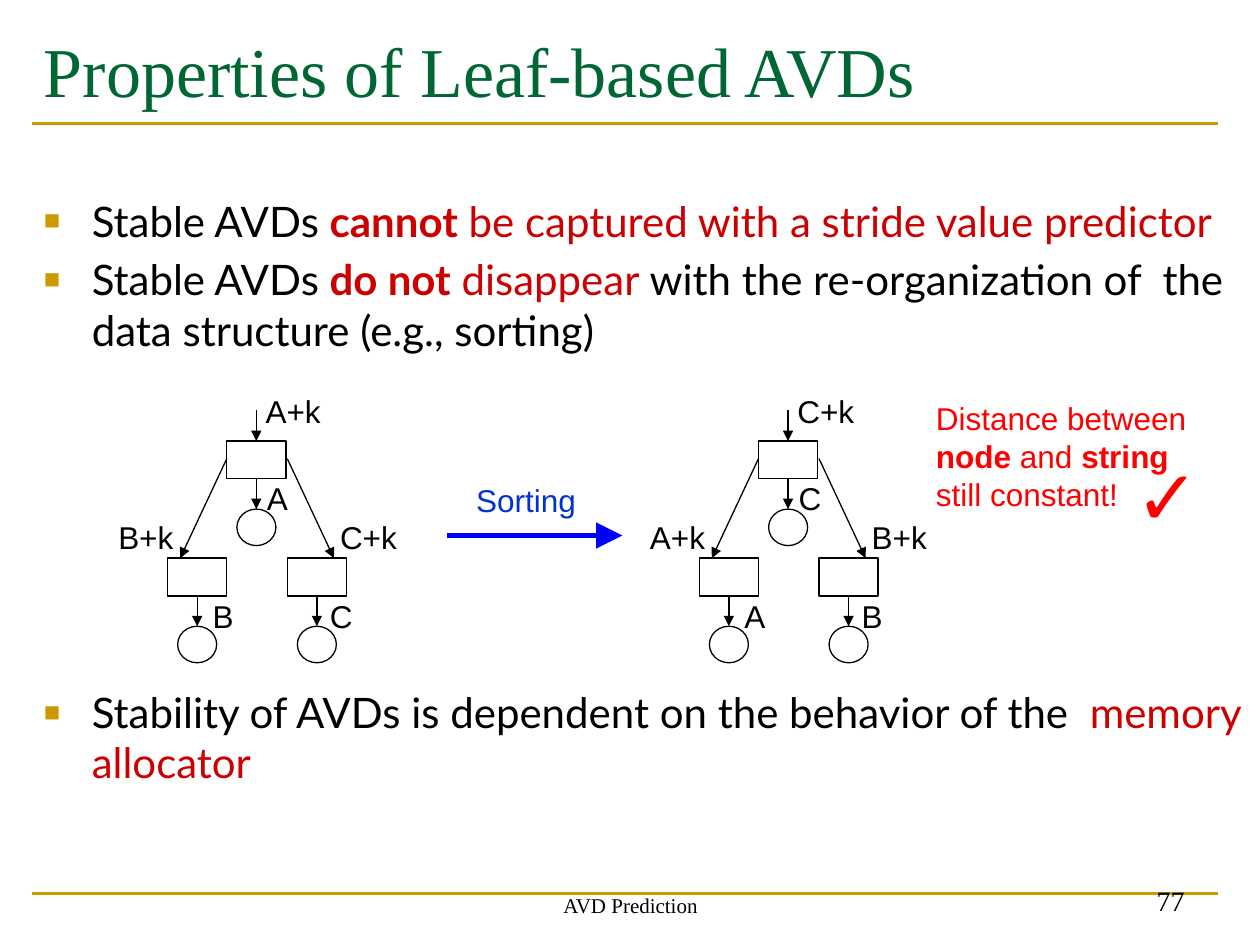
import dataclasses
import lxml.etree
import pptx
import pptx.dml.color
import pptx.enum.shapes
import pptx.enum.text
import pptx.oxml.ns
import pptx.util

Inches = pptx.util.Inches
Pt = pptx.util.Pt
Shape = pptx.enum.shapes.MSO_SHAPE
Align = pptx.enum.text.PP_ALIGN
Anchor = pptx.enum.text.MSO_ANCHOR
qn = pptx.oxml.ns.qn


@dataclasses.dataclass(frozen=True)
class Theme:
    serif: str = "Times New Roman"
    body: str = "Lato"
    label: str = "Arial"
    black: str = "000000"
    gold: str = "CC9900"
    green: str = "006633"
    crimson: str = "CC0000"
    red: str = "FF0000"
    blue: str = "0000FF"
    caption: str = "0033CC"
    title_size: int = 40
    body_size: int = 24
    label_size: int = 18
    check_size: int = 44
    footer_size: int = 12
    number_size: int = 16
    thin: float = 0.75
    rule: float = 1.5
    thick: float = 3


THEME = Theme()
RED = {"color": THEME.crimson}
RED_BOLD = {"color": THEME.crimson, "bold": True}
BOLD = {"bold": True}

TITLE = [["Properties of Leaf-based AVDs"]]
BULLETS = [
    ["Stable AVDs ", ("cannot", RED_BOLD), (" be captured with a stride value predictor", RED)],
    ["Stable AVDs ", ("do not", RED_BOLD), (" disappear", RED),
     " with the re-organization of  the data structure (e.g., sorting)"],
    ["Stability of AVDs is dependent on the behavior of the  ", ("memory allocator", RED)],
]
BULLET_SPACE = [4.8, 4.8, 189.5]
REMARK = [["Distance between"], [("node", BOLD), " and ", ("string", BOLD)], ["still constant!"]]
TREES = [(1.8, "ABC"), (6.02, "CAB")]
RULES = [7.09, 0.98]

NODE_WIDTH, NODE_HEIGHT = 0.47, 0.3
LEAF_WIDTH, LEAF_HEIGHT = 0.31, 0.29
ROOT_TOP, CHILD_TOP = 3.5, 4.43
NODES = [
    {"left": 0, "top": ROOT_TOP, "address": (0.21, 3.06), "value": (0.22, 3.75)},
    {"left": -0.47, "top": CHILD_TOP, "address": (-0.96, 4.06), "value": (-0.21, 4.69)},
    {"left": 0.48, "top": CHILD_TOP, "address": (0.8, 4.06), "value": (0.72, 4.69)},
]
BRANCHES = [(0, -0.37), (0.48, 0.85)]


def rgb(value):
    return pptx.dml.color.RGBColor.from_string(value)


def add_text(owner, place, paragraphs, *, font=THEME.label, size=THEME.label_size,
             color=THEME.black, align=Align.LEFT, anchor=Anchor.TOP, wrap=True,
             bullet=False, space=None):
    box = owner.add_textbox(*map(Inches, place))
    frame = box.text_frame
    frame.word_wrap = wrap
    frame.vertical_anchor = anchor
    for index, pieces in enumerate(paragraphs):
        para = frame.paragraphs[0] if index == 0 else frame.add_paragraph()
        para.alignment = align
        if space:
            para.space_before = Pt(space[index])
        if bullet:
            add_bullet(para)
        for piece in pieces:
            words, style = (piece, {}) if isinstance(piece, str) else piece
            span = para.add_run()
            span.text = words
            span.font.name = font
            span.font.size = Pt(size)
            span.font.bold = style.get("bold", False)
            span.font.color.rgb = rgb(style.get("color", color))


def add_bullet(para):
    settings = para._p.get_or_add_pPr()
    settings.set("marL", str(Inches(0.38)))
    settings.set("indent", str(-Inches(0.38)))
    tint = lxml.etree.SubElement(settings, qn("a:buClr"))
    lxml.etree.SubElement(tint, qn("a:srgbClr")).set("val", THEME.gold)
    lxml.etree.SubElement(settings, qn("a:buSzPct")).set("val", "65000")
    lxml.etree.SubElement(settings, qn("a:buFont")).set("typeface", THEME.label)
    lxml.etree.SubElement(settings, qn("a:buChar")).set("char", "■")


def add_line(owner, start, end, color=THEME.black, width=THEME.thin, arrow="med"):
    line = owner.add_connector(pptx.enum.shapes.MSO_CONNECTOR.STRAIGHT,
                               *map(Inches, (*start, *end)))
    line.line.color.rgb = rgb(color)
    line.line.width = Pt(width)
    if arrow:
        tip = lxml.etree.SubElement(line.line._get_or_add_ln(), qn("a:tailEnd"))
        for key, value in (("type", "triangle"), ("w", arrow), ("len", arrow)):
            tip.set(key, value)
    lxml.etree.SubElement(line._element.spPr, qn("a:effectLst"))


def add_outline(owner, kind, place):
    shape = owner.add_shape(kind, *map(Inches, place))
    shape.shadow.inherit = False
    shape.fill.background()
    shape.line.color.rgb = rgb(THEME.black)
    shape.line.width = Pt(THEME.thin)


def add_tree(page, left, names):
    group = page.shapes.add_group_shape().shapes
    root_middle = left + NODE_WIDTH / 2
    add_line(group, (root_middle, 3.25), (root_middle, ROOT_TOP))
    for node, name in zip(NODES, names):
        node_left, top = left + node["left"], node["top"]
        middle = node_left + NODE_WIDTH / 2
        leaf_top = top + 0.54
        add_outline(group, Shape.RECTANGLE, (node_left, top, NODE_WIDTH, NODE_HEIGHT))
        add_outline(group, Shape.OVAL,
                    (middle - LEAF_WIDTH / 2, leaf_top, LEAF_WIDTH, LEAF_HEIGHT))
        add_line(group, (middle, top + NODE_HEIGHT), (middle, leaf_top))
        for key, words, width in (("address", name + "+k", 0.68), ("value", name, 0.4)):
            x, y = node[key]
            add_text(group, (left + x, y, width, 0.4), [[words]])
    for start, end in BRANCHES:
        add_line(group, (left + start, 3.64), (left + end, CHILD_TOP))


def main():
    deck = pptx.Presentation()
    deck.slide_width, deck.slide_height = Inches(10), Inches(7.5)
    page = deck.slides.add_slide(deck.slide_layouts[6])
    shapes = page.shapes
    for y in RULES:
        add_line(shapes, (0.25, y), (9.67, y), THEME.gold, THEME.rule, arrow=None)
    add_text(shapes, (3.42, 6.83, 3.17, 0.5), [["AVD Prediction"]], font=THEME.serif,
             size=THEME.footer_size, align=Align.CENTER, anchor=Anchor.BOTTOM)
    add_text(shapes, (7.17, 6.83, 2.33, 0.5), [["77"]], font=THEME.serif,
             size=THEME.number_size, align=Align.RIGHT, anchor=Anchor.BOTTOM)
    add_text(shapes, (0.25, 0.17, 9.42, 1.17), TITLE, font=THEME.serif,
             size=THEME.title_size, color=THEME.green)
    add_text(shapes, (0.25, 1.5, 9.75, 5.33), BULLETS, font=THEME.body,
             size=THEME.body_size, bullet=True, space=BULLET_SPACE)
    for left, names in TREES:
        add_tree(page, left, names)
    add_line(shapes, (3.55, 4.25), (4.94, 4.25), THEME.blue, THEME.thick, arrow="lg")
    add_text(shapes, (3.68, 3.77, 0.99, 0.4), [["Sorting"]], color=THEME.caption, wrap=False)
    add_text(shapes, (7.33, 3.12, 2.19, 1), REMARK, color=THEME.red, wrap=False)
    add_text(shapes, (8.91, 3.51, 0.82, 0.83), [["✓"]], size=THEME.check_size, color=THEME.red)
    deck.save("out.pptx")


if __name__ == "__main__":
    main()
